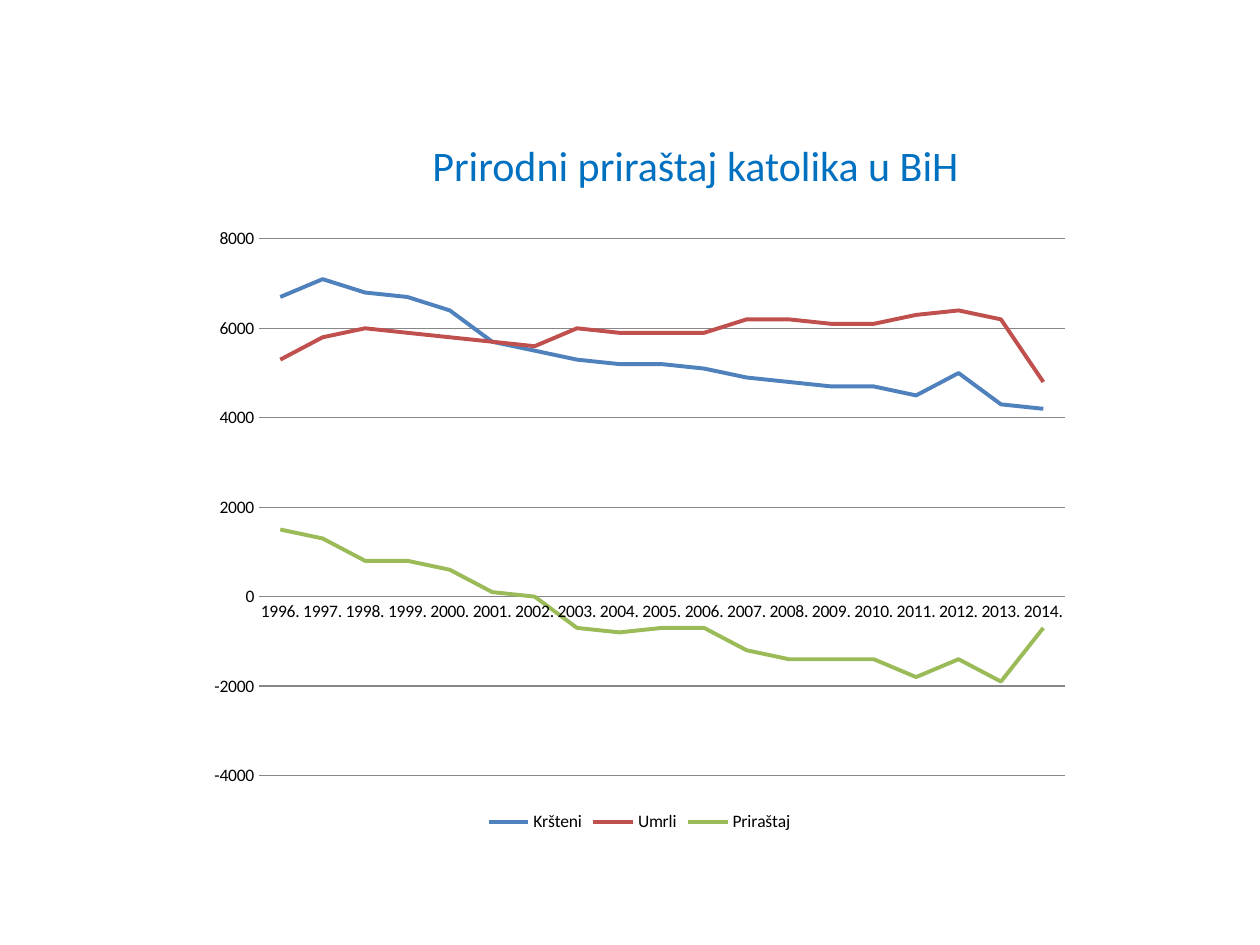
from pptx import Presentation
from pptx.chart.data import CategoryChartData
from pptx.dml.color import RGBColor
from pptx.enum.chart import XL_CHART_TYPE as ChartType, XL_LEGEND_POSITION as LegendPos
from pptx.enum.chart import XL_TICK_MARK as Tick
from pptx.enum.text import MSO_ANCHOR, PP_ALIGN
from pptx.util import Inches, Pt

FONT = "Calibri"
TITLE_BLUE = RGBColor(0x00, 0x70, 0xC0)
BLACK = RGBColor(0, 0, 0)
GRID_GRAY = RGBColor(0x87, 0x87, 0x87)
BLUE = RGBColor(0x4F, 0x81, 0xBD)
RED = RGBColor(0xC0, 0x50, 0x4D)
GREEN = RGBColor(0x9B, 0xBB, 0x59)

YEARS = [f"{year}." for year in range(1996, 2015)]
SERIES = [
    ("Kršteni", BLUE, [6700, 7100, 6800, 6700, 6400, 5700, 5500, 5300, 5200, 5200,
                       5100, 4900, 4800, 4700, 4700, 4500, 5000, 4300, 4200]),
    ("Umrli", RED, [5300, 5800, 6000, 5900, 5800, 5700, 5600, 6000, 5900, 5900,
                    5900, 6200, 6200, 6100, 6100, 6300, 6400, 6200, 4800]),
    ("Priraštaj", GREEN, [1500, 1300, 800, 800, 600, 100, 0, -700, -800, -700,
                          -700, -1200, -1400, -1400, -1400, -1800, -1400, -1900, -700]),
]


class SlideBuilder:
    def __init__(self, slide):
        self.s = slide

    def set_font(self, font, size, color):
        for name, value in {"name": FONT, "size": Pt(size), "bold": False}.items():
            setattr(font, name, value)
        font.color.rgb = color

    def set_line(self, line, color, width):
        line.color.rgb = color
        line.width = Pt(width)

    def title(self, text, box):
        tf = self.s.shapes.add_textbox(*map(Inches, box)).text_frame
        tf.word_wrap = True
        tf.vertical_anchor = MSO_ANCHOR.MIDDLE
        p = tf.paragraphs[0]
        p.alignment = PP_ALIGN.CENTER
        r = p.add_run()
        r.text = text
        self.set_font(r.font, 24, TITLE_BLUE)

    def line_chart(self, categories, series, box):
        data = CategoryChartData(number_format="General")
        data.categories = categories
        for name, _, values in series:
            data.add_series(name, values)
        chart = self.s.shapes.add_chart(ChartType.LINE, *map(Inches, box), data).chart
        chart.has_title = False
        self.set_font(chart.font, 10, BLACK)
        chart.has_legend = True
        chart.legend.position = LegendPos.BOTTOM
        chart.legend.include_in_layout = False

        plot = chart.plots[0]
        plot.vary_by_categories = False
        for line, (_, color, _) in zip(plot.series, series):
            line.smooth = False
            self.set_line(line.format.line, color, 2.25)

        for axis in (chart.category_axis, chart.value_axis):
            axis.major_tick_mark = axis.minor_tick_mark = Tick.NONE
        self.set_line(chart.category_axis.format.line, GRID_GRAY, 0.75)
        value_axis = chart.value_axis
        scale = {"minimum_scale": -4000, "maximum_scale": 8000, "major_unit": 2000}
        for name, value in scale.items():
            setattr(value_axis, name, value)
        value_axis.format.line.fill.background()
        value_axis.has_major_gridlines = True
        self.set_line(value_axis.major_gridlines.format.line, GRID_GRAY, 0.75)


def main():
    prs = Presentation()
    prs.slide_width, prs.slide_height = Inches(10), Inches(7.5)
    builder = SlideBuilder(prs.slides.add_slide(prs.slide_layouts[6]))
    builder.title("Prirodni priraštaj katolika u BiH", (1.26, 0.68, 8.52, 1.25))
    builder.line_chart(YEARS, SERIES, (1.56, 1.72, 7.03, 4.92))
    prs.save("out.pptx")


if __name__ == "__main__":
    main()
